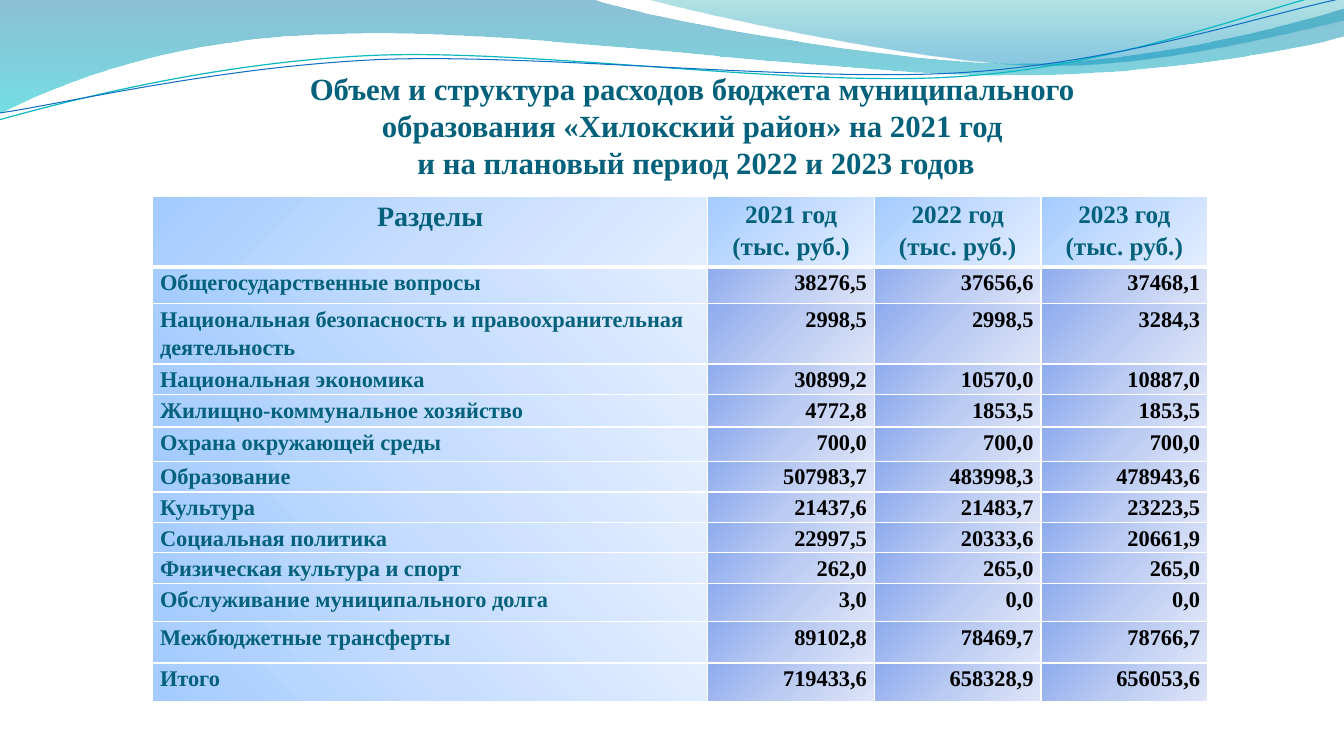
from dataclasses import dataclass
from typing import Any

from lxml.etree import SubElement
from pptx import Presentation
from pptx.dml.color import RGBColor
from pptx.enum.text import MSO_ANCHOR as Anchor, MSO_AUTO_SIZE as AutoSize, PP_ALIGN as Align
from pptx.oxml import parse_xml
from pptx.oxml.ns import nsdecls, qn
from pptx.util import Pt

FONT = "Times New Roman"
TEAL, BLACK, WHITE = "04617B", "000000", "FFFFFF"
Point = tuple[float, float]


@dataclass(frozen=True)
class Gradient:
    stops: tuple[tuple[int, str, int], ...]
    angle: int


@dataclass(frozen=True)
class Wave:
    start: Point
    segments: tuple[tuple[Point, ...], ...]
    gradient: Gradient | None = None
    line_color: str = ""
    line_width: float = 0
    rotation: float = 0


@dataclass(frozen=True)
class CellStyle:
    size: float
    color: str
    alignment: Align
    gradient: Gradient


LIGHT_STOPS = ((0, "A3CBFF", 100), (50, "C6DDFF", 100), (100, "E3EEFF", 100))
VALUE_STOPS = ((0, "8EABEE", 100), (50, "BBCBF2", 100), (100, "DEE5F8", 100))
HEADER_FIRST = CellStyle(20, TEAL, Align.CENTER, Gradient(LIGHT_STOPS, 45))
HEADER_YEAR = CellStyle(18, TEAL, Align.CENTER, Gradient(LIGHT_STOPS, 45))
SECTION = CellStyle(16, TEAL, Align.LEFT, Gradient(LIGHT_STOPS, 315))
VALUE = CellStyle(16, BLACK, Align.RIGHT, Gradient(VALUE_STOPS, 45))

WAVES = (
    Wave((0, 0), (
        ((422.6, -0.7),),
        ((456.5, 12.2), (637.2, 45.4), (727.9, 45.4)),
        ((819.4, 45.4), (920.2, 18.7), (959.8, 6.5)),
        ((961.2, 25.9),),
        ((943.9, 31.7), (835.2, 54.7), (715.7, 54)),
        ((596.9, 54), (366.5, 20.2), (247, 24.5)),
        ((123.1, 25.9), (43.9, 59.8), (-0.7, 81.4)),
        ((0, 0),),
    ), Gradient(((0, "0074A1", 45), (100, "00C6CF", 55)), 90)),
    Wave((460.1, -0.7), (
        ((488.9, 7.9), (654.5, 44.6), (738, 46.8)),
        ((821.5, 49.7), (923, 23), (959.8, 15.1)),
        ((959.8, 0),),
        ((460.1, -0.7),),
    ), Gradient(((0, "00A1A9", 30), (80, "008BBF", 45)), 90)),
    Wave((-2.3, 63), (
        ((45.1, 52.3), (152.1, 29.2), (266, 29.6)),
        ((379.9, 29.9), (567.7, 66.9), (683.1, 64.4)),
        ((798.6, 62.6), (902.7, 25.7), (960, 15.4)),
    ), line_color="0AB8BF", line_width=0.85, rotation=357.3),
    Wave((-1.3, 58), (
        ((44.4, 53.6), (157.1, 32.3), (272.4, 32.7)),
        ((386.9, 33.8), (572.2, 63.4), (686.9, 61.6)),
        ((802.3, 59.8), (904.7, 30.1), (962, 21.2)),
    ), line_color="0F6FC6", line_width=0.75, rotation=357.3),
)

TITLE = (
    "Объем и структура расходов бюджета муниципального \v"
    "образования «Хилокский район» на 2021 год \v"
    "и на плановый период 2022 и 2023 годов"
)
BUDGET = (
    ("Разделы", *(f"{year} год (тыс. руб.)" for year in (2021, 2022, 2023))),
    ("Общегосударственные вопросы", "38276,5", "37656,6", "37468,1"),
    ("Национальная безопасность и правоохранительная деятельность", "2998,5", "2998,5", "3284,3"),
    ("Национальная экономика", "30899,2", "10570,0", "10887,0"),
    ("Жилищно-коммунальное хозяйство", "4772,8", "1853,5", "1853,5"),
    ("Охрана окружающей среды", "700,0", "700,0", "700,0"),
    ("Образование", "507983,7", "483998,3", "478943,6"),
    ("Культура", "21437,6", "21483,7", "23223,5"),
    ("Социальная политика", "22997,5", "20333,6", "20661,9"),
    ("Физическая культура и спорт", "262,0", "265,0", "265,0"),
    ("Обслуживание муниципального долга", "3,0", "0,0", "0,0"),
    ("Межбюджетные трансферты", "89102,8", "78469,7", "78766,7"),
    ("Итого", "719433,6", "658328,9", "656053,6"),
)
COLUMN_WIDTHS = (396.7, 119, 119, 119)
ROW_HEIGHTS = (50.4, 26, 43.2, 22, 23, 24.5, 22, 21.6, 21.6, 22, 27.4, 29.5, 27.4)


def rgb(value: str) -> RGBColor:
    return RGBColor.from_string(value)


def apply(target: Any, values: dict[str, Any]) -> None:
    for name, value in values.items():
        setattr(target, name, value)


def format_text(paragraph: Any, size: float, color: str, alignment: Align) -> None:
    paragraph.alignment = alignment
    for run in paragraph.runs:
        apply(run.font, {"name": FONT, "size": Pt(size), "bold": True})
        run.font.color.rgb = rgb(color)


def gradient_element(gradient: Gradient) -> Any:
    stops = "".join(
        f'<a:gs pos="{position * 1000}"><a:srgbClr val="{color}">'
        f'<a:alpha val="{alpha * 1000}"/></a:srgbClr></a:gs>'
        for position, color, alpha in gradient.stops
    )
    return parse_xml(
        f'<a:gradFill {nsdecls("a")} rotWithShape="1"><a:gsLst>{stops}</a:gsLst>'
        f'<a:lin ang="{gradient.angle * 60000}" scaled="0"/></a:gradFill>'
    )


def bend_segments(outline: Any, segments: tuple[tuple[Point, ...], ...]) -> None:
    lines = iter(list(outline.iter(qn("a:lnTo"))))
    for segment in segments:
        group = [next(lines) for _ in segment]
        if len(group) == 3:
            curve = parse_xml(f'<a:cubicBezTo {nsdecls("a")}/>')
            group[0].addprevious(curve)
            for line in group:
                curve.append(line[0])
                line.getparent().remove(line)


def draw_wave(slide: Any, wave: Wave) -> None:
    vertices = [(Pt(x), Pt(y)) for segment in wave.segments for x, y in segment]
    builder = slide.shapes.build_freeform(Pt(wave.start[0]), Pt(wave.start[1]))
    builder.add_line_segments(vertices, close=wave.gradient is not None)
    shape = builder.convert_to_shape()
    shape.shadow.inherit = False
    shape.rotation = wave.rotation
    outline = shape.element.spPr.find(qn("a:custGeom"))
    bend_segments(outline, wave.segments)
    if wave.gradient:
        shape.line.fill.background()
        outline.addnext(gradient_element(wave.gradient))
    else:
        shape.fill.background()
        shape.line.color.rgb = rgb(wave.line_color)
        shape.line.width = Pt(wave.line_width)


def draw_cell(cell: Any, text: str, style: CellStyle, borders: dict[str, float]) -> None:
    apply(cell, {"text": text, "margin_left": Pt(5.4), "margin_right": Pt(5.4),
                 "margin_top": Pt(0), "margin_bottom": Pt(0)})
    paragraph = cell.text_frame.paragraphs[0]
    paragraph.line_spacing = 1.15
    format_text(paragraph, style.size, style.color, style.alignment)
    properties = cell._tc.get_or_add_tcPr()
    for side, width in borders.items():
        border = SubElement(properties, qn(f"a:ln{side}"), w=str(Pt(width)))
        SubElement(SubElement(border, qn("a:solidFill")), qn("a:srgbClr"), val=WHITE)
    properties.append(gradient_element(style.gradient))


def draw_title(slide: Any) -> None:
    title = slide.shapes.title
    title.element.getparent().append(title.element)
    apply(title, {"left": Pt(120.2), "top": Pt(67.7), "width": Pt(753.8), "height": Pt(61.2)})
    frame = title.text_frame
    apply(frame, {"text": TITLE, "word_wrap": True, "auto_size": AutoSize.NONE,
                  "vertical_anchor": Anchor.BOTTOM, "margin_left": Pt(0),
                  "margin_right": Pt(0), "margin_top": Pt(3.6), "margin_bottom": Pt(0)})
    format_text(frame.paragraphs[0], 22, TEAL, Align.CENTER)


def draw_budget(slide: Any) -> None:
    table = slide.shapes.add_table(
        len(BUDGET), len(COLUMN_WIDTHS), Pt(108.9), Pt(140.4),
        Pt(sum(COLUMN_WIDTHS)), Pt(sum(ROW_HEIGHTS))).table
    for column, width in zip(table.columns, COLUMN_WIDTHS):
        column.width = Pt(width)
    for i, (texts, height) in enumerate(zip(BUDGET, ROW_HEIGHTS)):
        table.rows[i].height = Pt(height)
        first, other = (SECTION, VALUE) if i else (HEADER_FIRST, HEADER_YEAR)
        borders = {"L": 1, "R": 1, "T": 3 if i == 1 else 1, "B": 1 if i else 3}
        for j, text in enumerate(texts):
            draw_cell(table.cell(i, j), text, other if j else first, borders)


def main() -> None:
    presentation = Presentation()
    apply(presentation, {"slide_width": Pt(960), "slide_height": Pt(540)})
    slide = presentation.slides.add_slide(presentation.slide_layouts[5])
    for wave in WAVES:
        draw_wave(slide, wave)
    draw_title(slide)
    draw_budget(slide)
    presentation.save("out.pptx")


if __name__ == "__main__":
    main()
